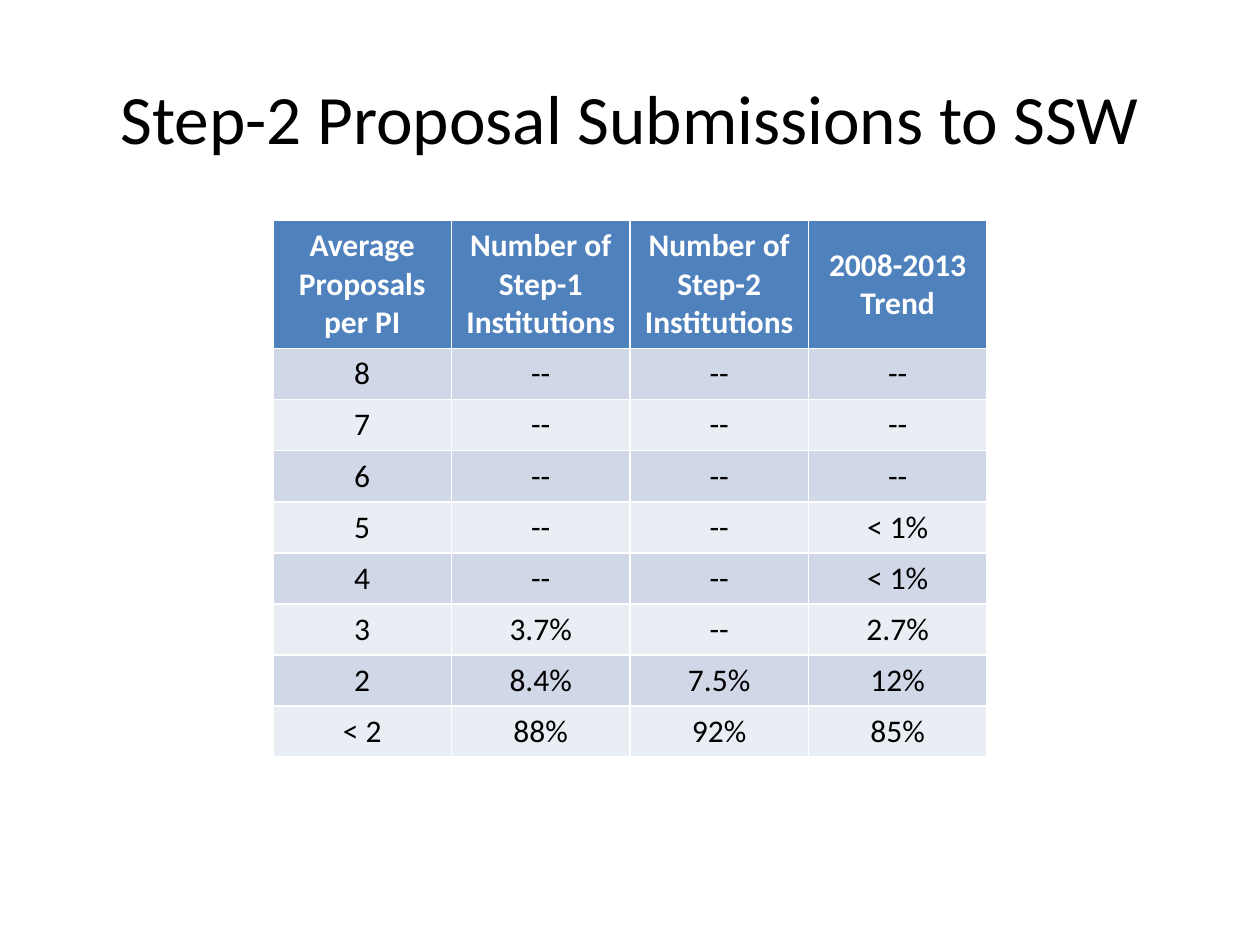
from typing import NamedTuple

from pptx import Presentation
from pptx.dml.color import RGBColor
from pptx.enum.text import MSO_ANCHOR, PP_ALIGN
from pptx.util import Pt


class CellStyle(NamedTuple):
    fill: str
    color: str
    bold: bool


HEADER_STYLE = CellStyle("4F81BD", "FFFFFF", True)
BAND_STYLES = (CellStyle("D0D8E8", "000000", False),
               CellStyle("E9EDF4", "000000", False))
HEADER_HEIGHT, ROW_HEIGHT, COLUMN_WIDTH = 72, 29.2, 102
ROWS = (
    ("Average Proposals per PI", "Number of Step-1 Institutions",
     "Number of Step-2 Institutions", "2008-2013 Trend"),
    ("8", "--", "--", "--"),
    ("7", "--", "--", "--"),
    ("6", "--", "--", "--"),
    ("5", "--", "--", "< 1%"),
    ("4", "--", "--", "< 1%"),
    ("3", "3.7%", "--", "2.7%"),
    ("2", "8.4%", "7.5%", "12%"),
    ("< 2", "88%", "92%", "85%"),
)


def rgb(color: str) -> RGBColor:
    return RGBColor.from_string(color)


def set_attributes(target, values: dict) -> None:
    for name, value in values.items():
        setattr(target, name, value)


def write_text(text_frame, text: str, size: float, color: str, bold: bool) -> None:
    text_frame.text = text
    paragraph = text_frame.paragraphs[0]
    paragraph.alignment = PP_ALIGN.CENTER
    font = paragraph.runs[0].font
    set_attributes(font, {"name": "Calibri", "size": Pt(size), "bold": bold})
    font.color.rgb = rgb(color)


def draw_cell(cell, text: str, style: CellStyle) -> None:
    cell.fill.solid()
    cell.fill.fore_color.rgb = rgb(style.fill)
    cell.vertical_anchor = MSO_ANCHOR.MIDDLE
    write_text(cell.text_frame, text, 18, style.color, style.bold)


def add_proposal_table(slide, left: float, top: float) -> None:
    column_count = len(ROWS[0])
    height = HEADER_HEIGHT + ROW_HEIGHT * (len(ROWS) - 1)
    table = slide.shapes.add_table(
        len(ROWS), column_count, Pt(left), Pt(top),
        Pt(COLUMN_WIDTH * column_count), Pt(height)).table
    for column in table.columns:
        column.width = Pt(COLUMN_WIDTH)
    for row_index, texts in enumerate(ROWS):
        is_header = row_index == 0
        table.rows[row_index].height = Pt(HEADER_HEIGHT if is_header else ROW_HEIGHT)
        style = HEADER_STYLE if is_header else BAND_STYLES[(row_index - 1) % 2]
        for column_index, text in enumerate(texts):
            draw_cell(table.cell(row_index, column_index), text, style)


def main() -> None:
    presentation = Presentation()
    set_attributes(presentation, {"slide_width": Pt(720), "slide_height": Pt(540)})
    slide = presentation.slides.add_slide(presentation.slide_layouts[5])

    # Title
    title = slide.shapes.title
    set_attributes(title, {"left": Pt(36), "top": Pt(21.6),
                           "width": Pt(648), "height": Pt(90)})
    title.text_frame.vertical_anchor = MSO_ANCHOR.MIDDLE
    write_text(title.text_frame, "Step-2 Proposal Submissions to SSW",
               39.6, "000000", False)

    # Table, centred across the slide
    add_proposal_table(slide, left=(720 - COLUMN_WIDTH * len(ROWS[0])) / 2, top=126)

    presentation.save("out.pptx")


if __name__ == "__main__":
    main()
